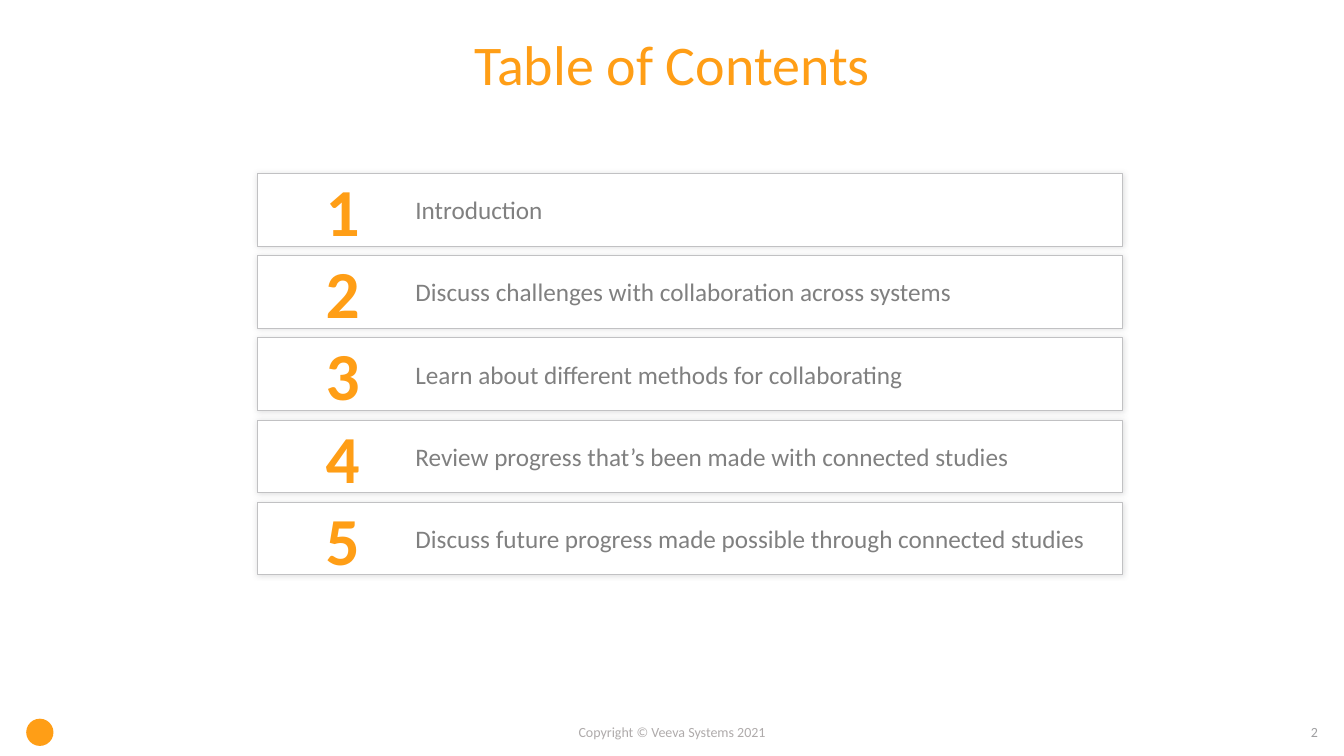
from dataclasses import dataclass

from lxml import etree
from pptx import Presentation
from pptx.dml.color import RGBColor
from pptx.enum.shapes import MSO_SHAPE
from pptx.enum.text import MSO_ANCHOR, MSO_AUTO_SIZE, PP_ALIGN
from pptx.oxml.ns import qn
from pptx.util import Inches, Pt

LEFT, CENTER, RIGHT = PP_ALIGN.LEFT, PP_ALIGN.CENTER, PP_ALIGN.RIGHT
MIDDLE = MSO_ANCHOR.MIDDLE
NO_AUTOFIT = MSO_AUTO_SIZE.NONE
RECTANGLE, OVAL = MSO_SHAPE.RECTANGLE, MSO_SHAPE.OVAL

SLIDE_WIDTH, SLIDE_HEIGHT = Inches(13.33), Inches(7.5)
TITLE_ONLY = 5
FONT = "Calibri"
COLORS = {
    "accent": "FF9E16",
    "card": "FFFFFF",
    "card_line": "C1C1C3",
    "shadow": "646569",
    "topic": "808080",
    "copyright": "AFABAB",
    "page_number": "9F9FA1",
}


@dataclass(frozen=True)
class Box:
    """A place on the slide, in percent of its width and height."""
    left: float
    top: float
    width: float
    height: float

    def emu(self) -> tuple[int, int, int, int]:
        return (share(self.left, SLIDE_WIDTH), share(self.top, SLIDE_HEIGHT),
                share(self.width, SLIDE_WIDTH), share(self.height, SLIDE_HEIGHT))


@dataclass(frozen=True)
class Topic:
    number: int
    text: str

    @property
    def top(self) -> float:
        return FIRST_ROW + (self.number - 1) * ROW_PITCH


FIRST_ROW, ROW_PITCH = 22.93, 10.87
CARD_LEFT, CARD_WIDTH, CARD_HEIGHT = 19.13, 64.37, 9.6
NUMBER_LEFT, NUMBER_WIDTH, NUMBER_HEIGHT = 22.88, 5.25, 11.2
TOPIC_INDENT = 11.78
FOOTER_TOP, FOOTER_HEIGHT = 95.07, 3.6

TITLE_BOX = Box(2.25, 1.47, 95.5, 16)
MARK_BOX = Box(1.95, FOOTER_TOP, 2.03, FOOTER_HEIGHT)
COPYRIGHT_BOX = Box(32.41, FOOTER_TOP, 35.18, FOOTER_HEIGHT)
PAGE_NUMBER_BOX = Box(90.4, FOOTER_TOP, 8.4, FOOTER_HEIGHT)

TOPICS = [Topic(number, text) for number, text in enumerate((
    "Introduction",
    "Discuss challenges with collaboration across systems",
    "Learn about different methods for collaborating",
    "Review progress that’s been made with connected studies",
    "Discuss future progress made possible through connected studies",
), start=1)]


def share(percent: float, length: int) -> int:
    return round(length * percent / 100)


def color(name: str) -> RGBColor:
    return RGBColor.from_string(COLORS[name])


def write(shape, text: str, *, size: float, color_name: str, align=LEFT,
          bold: bool = False, line_spacing: float | None = None) -> None:
    frame = shape.text_frame
    frame.word_wrap = True
    frame.auto_size = NO_AUTOFIT
    frame.vertical_anchor = MIDDLE
    paragraph = frame.paragraphs[0]
    paragraph.alignment = align
    paragraph.line_spacing = line_spacing
    run = paragraph.add_run()
    run.text = text
    run.font.name = FONT
    run.font.size = Pt(size)
    run.font.bold = bold
    run.font.color.rgb = color(color_name)


def add_label(slide, box: Box, text: str, **text_format) -> None:
    write(slide.shapes.add_textbox(*box.emu()), text, **text_format)


def add_filled_shape(slide, kind, box: Box, fill: str):
    shape = slide.shapes.add_shape(kind, *box.emu())
    shape.shadow.inherit = False
    shape.fill.solid()
    shape.fill.fore_color.rgb = color(fill)
    shape.line.fill.background()
    return shape


def add_soft_shadow(shape) -> None:
    effects = shape.element.spPr.find(qn("a:effectLst"))
    shadow = etree.SubElement(effects, qn("a:outerShdw"), blurRad=str(Pt(4)),
                              dist="0", algn="ctr", rotWithShape="0")
    tint = etree.SubElement(shadow, qn("a:srgbClr"), val=COLORS["shadow"])
    etree.SubElement(tint, qn("a:alpha"), val="20000")


def add_topic(slide, topic: Topic) -> None:
    card_box = Box(CARD_LEFT, topic.top, CARD_WIDTH, CARD_HEIGHT)
    card = add_filled_shape(slide, RECTANGLE, card_box, "card")
    card.line.color.rgb = color("card_line")
    card.line.width = Pt(0.5)
    add_soft_shadow(card)
    card.text_frame.margin_left = share(TOPIC_INDENT, SLIDE_WIDTH)
    write(card, topic.text, size=18, color_name="topic")

    number_top = topic.top - (NUMBER_HEIGHT - CARD_HEIGHT) / 2
    number_box = Box(NUMBER_LEFT, number_top, NUMBER_WIDTH, NUMBER_HEIGHT)
    add_label(slide, number_box, str(topic.number), size=48,
              color_name="accent", align=CENTER, bold=True)


def add_title(slide, text: str) -> None:
    title = slide.shapes.title
    title.left, title.top, title.width, title.height = TITLE_BOX.emu()
    write(title, text, size=40, color_name="accent", align=CENTER,
          line_spacing=0.7)


def add_footer(slide) -> None:
    add_filled_shape(slide, OVAL, MARK_BOX, "accent")
    add_label(slide, PAGE_NUMBER_BOX, "2", size=10,
              color_name="page_number", align=RIGHT)
    add_label(slide, COPYRIGHT_BOX, "Copyright © Veeva Systems 2021", size=10,
              color_name="copyright", align=CENTER)


def main() -> None:
    presentation = Presentation()
    presentation.slide_width = SLIDE_WIDTH
    presentation.slide_height = SLIDE_HEIGHT
    slide = presentation.slides.add_slide(presentation.slide_layouts[TITLE_ONLY])
    add_footer(slide)
    add_title(slide, "Table of Contents")
    for topic in TOPICS:
        add_topic(slide, topic)
    presentation.save("out.pptx")


if __name__ == "__main__":
    main()
